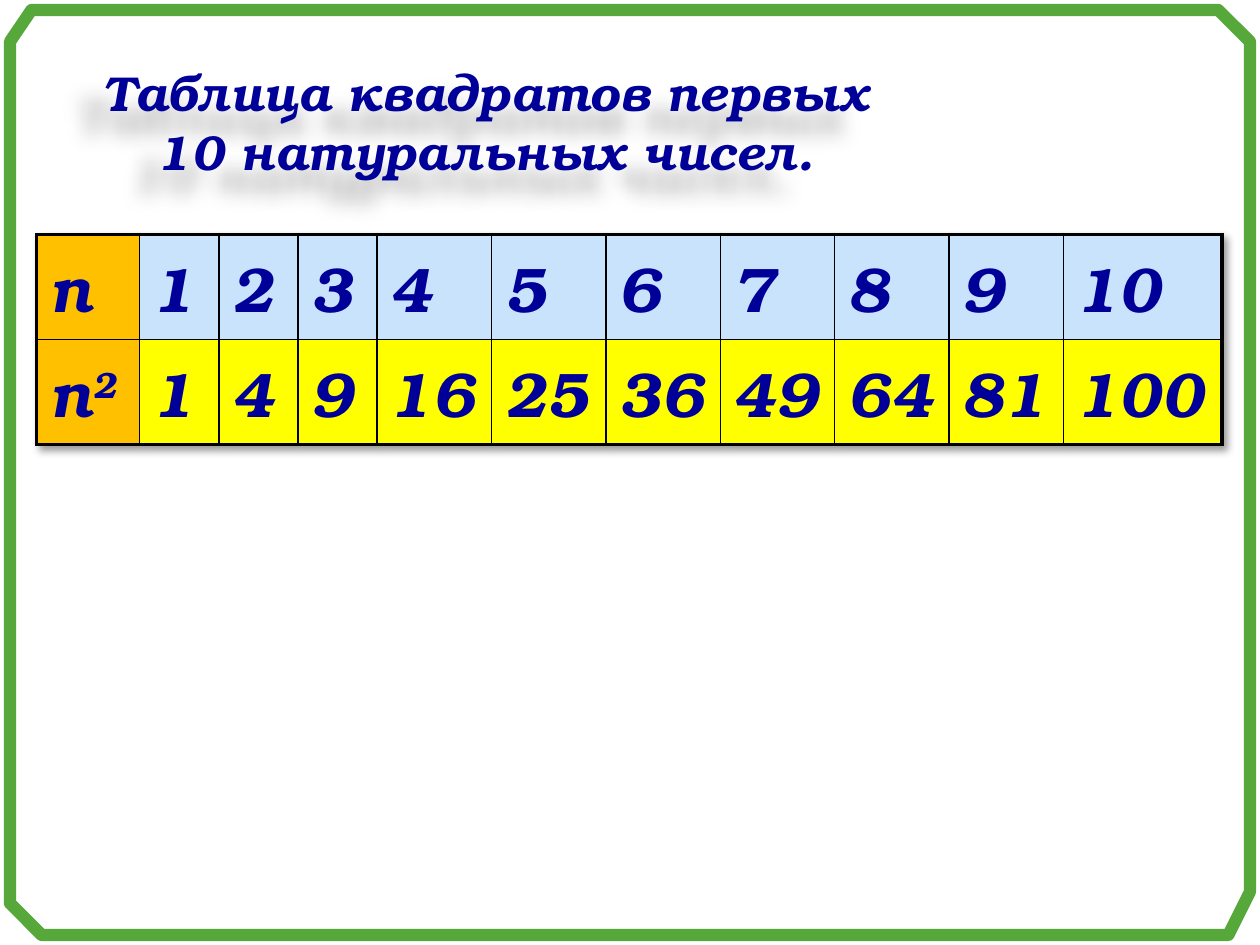
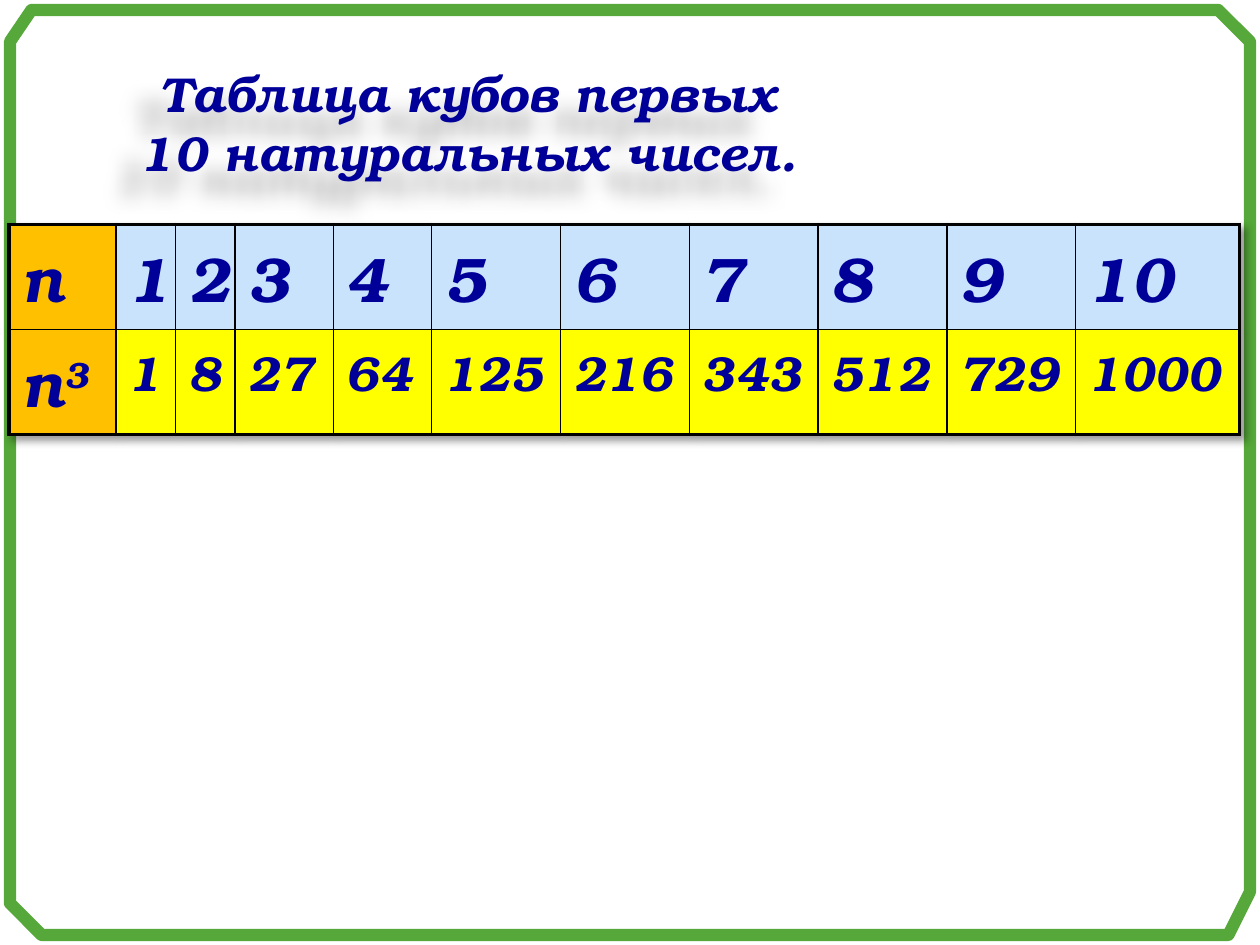
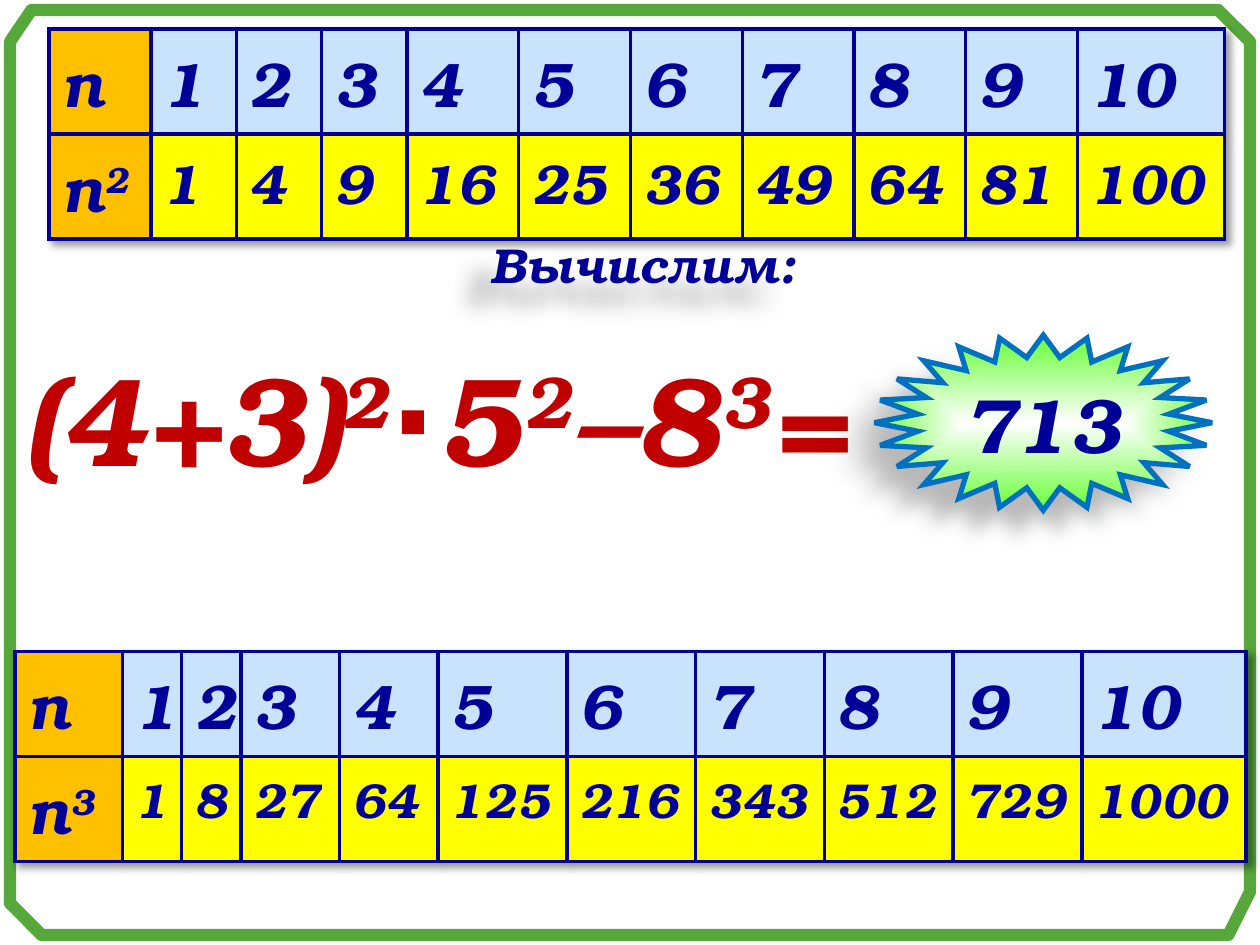
from pptx import Presentation
from pptx.dml.color import RGBColor
from pptx.enum.shapes import MSO_SHAPE as Preset
from pptx.enum.text import MSO_ANCHOR as Anchor, MSO_AUTO_SIZE as AutoSize, PP_ALIGN as Align
from pptx.oxml import parse_xml
from pptx.oxml.ns import nsdecls, qn
from pptx.util import Inches, Pt

COLORS = {
    "frame": "55A839",
    "ink": "000099",
    "formula": "C00000",
    "label": "FFC000",
    "number": "C8E3FB",
    "power": "FFFF00",
    "grid": "000000",
    "star_edge": "0070C0",
    "star_center": "FFFFFF",
    "star_rim": "66FF33",
}
FONT = "TeX Gyre Bonum"
FRAME_POINTS = [(0.08, 0.33), (0.08, 7.17), (0.33, 7.42), (9.75, 7.42),
                (9.92, 7.08), (9.92, 0.33), (9.67, 0.08), (0.25, 0.08)]
ROW_HEIGHT = 0.83
THICK, THIN = 2.25, 1
SOFT_SHADOW = {"alpha": 28, "blur": 11.8, "distance": 19.7, "angle": 141}
TABLE_SHADOW = {"alpha": 40, "blur": 4, "distance": 3, "angle": 45}
SQUARE_COLUMNS = [0.82] + [0.63] * 3 + [0.91] * 6 + [1.26]
SHORT_SQUARE_COLUMNS = [0.81] + [0.68] * 3 + [0.89] * 6 + [1.17]
CUBE_COLUMNS = [0.85] + [0.47] * 2 + [0.78] * 2 + [1.02] * 5 + [1.3]


def rgb(name):
    return RGBColor.from_string(COLORS[name])


def drawing(tag, attributes="", content=""):
    return parse_xml(f'<a:{tag} {nsdecls("a")} {attributes}>{content}</a:{tag}>')


def outer_shadow(alpha, blur, distance, angle):
    return drawing(
        "outerShdw",
        f'blurRad="{Pt(blur)}" dist="{Pt(distance)}" dir="{angle * 60000}" algn="ctr" rotWithShape="0"',
        f'<a:srgbClr val="000000"><a:alpha val="{alpha * 1000}"/></a:srgbClr>')


def write_text(frame, *parts, size=28, color="ink", align=Align.LEFT, anchor=Anchor.TOP, wrap=True):
    frame.word_wrap = wrap
    frame.vertical_anchor = anchor
    paragraph = frame.paragraphs[0]
    paragraph.alignment = align
    for position, part in enumerate(parts):
        run = paragraph.add_run()
        run.text = part
        run.font.name = FONT
        run.font.size = Pt(size)
        run.font.bold = run.font.italic = True
        run.font.color.rgb = rgb(color)
        is_superscript = position % 2 == 1
        if is_superscript:
            run._r.get_or_add_rPr().set("baseline", "30000")


class Deck:
    def __init__(self):
        self.presentation = Presentation()
        self.presentation.slide_width = Inches(10)
        self.presentation.slide_height = Inches(7.5)
        self.slide = None

    def add_slide(self):
        self.slide = self.presentation.slides.add_slide(self.presentation.slide_layouts[6])
        corners = [(Inches(x), Inches(y)) for x, y in FRAME_POINTS]
        builder = self.slide.shapes.build_freeform(*corners[0])
        builder.add_line_segments(corners[1:], close=True)
        frame = builder.convert_to_shape()
        frame.fill.background()
        self.outline(frame, "frame", 7, "round")
        frame.shadow.inherit = False

    def outline(self, shape, color, width, join):
        shape.line.color.rgb = rgb(color)
        shape.line.width = Pt(width)
        limit = 'lim="800000"' if join == "miter" else ""
        shape.line._get_or_add_ln().append(drawing(join, limit))

    def preset(self, kind, box, adjustments):
        shape = self.slide.shapes.add_shape(kind, *map(Inches, box))
        for index, value in enumerate(adjustments):
            shape.adjustments[index] = value
        shape.shadow.inherit = False
        shape._element.spPr.find(qn("a:effectLst")).append(outer_shadow(**SOFT_SHADOW))
        return shape

    def title(self, text, box, pointer):
        callout = self.preset(Preset.ROUNDED_RECTANGULAR_CALLOUT, box, (*pointer, 0.167))
        callout.fill.background()
        callout.line.fill.background()
        write_text(callout.text_frame, text, align=Align.CENTER)

    def formula(self, parts, box):
        frame = self.slide.shapes.add_textbox(*map(Inches, box)).text_frame
        write_text(frame, *parts, size=72, color="formula", wrap=False)
        frame.auto_size = AutoSize.SHAPE_TO_FIT_TEXT

    def answer_star(self, text, box):
        star = self.preset(Preset.STAR_24_POINT, box, (0.375,))
        star.fill.gradient()
        for stop, color in zip(star.fill.gradient_stops, ("star_center", "star_rim")):
            stop.color.rgb = rgb(color)
        gradient = star._element.spPr.find(qn("a:gradFill"))
        gradient.remove(gradient.find(qn("a:lin")))
        gradient.append(drawing("path", 'path="shape"',
                                '<a:fillToRect l="50000" t="50000" r="50000" b="50000"/>'))
        self.outline(star, "star_edge", 3, "miter")
        write_text(star.text_frame, text, size=44, align=Align.CENTER,
                   anchor=Anchor.MIDDLE, wrap=False)

    def power_table(self, exponent, left, top, width, columns,
                    power_size=36, grid="grid", inner=THIN):
        numbers = range(1, 11)
        rows = [[("n",)] + [(str(n),) for n in numbers],
                [("n", str(exponent))] + [(str(n ** exponent),) for n in numbers]]
        graphic = self.slide.shapes.add_table(
            len(rows), len(columns), Inches(left), Inches(top),
            Inches(width), Inches(ROW_HEIGHT * len(rows)))
        table = graphic.table
        table.first_row = table.horz_banding = False
        effects = drawing("effectLst")
        effects.append(outer_shadow(**TABLE_SHADOW))
        table._tbl.tblPr.insert(0, effects)
        for column, share in zip(table.columns, columns):
            column.width = Inches(width * share / sum(columns))
        last_row, last_column = len(rows) - 1, len(columns) - 1
        for r, row in enumerate(rows):
            table.rows[r].height = Inches(ROW_HEIGHT)
            for c, parts in enumerate(row):
                cell = table.cell(r, c)
                write_text(cell.text_frame, *parts, size=power_size if r and c else 36)
                edges = {"lnL": c == 0, "lnR": c == last_column,
                         "lnT": r == 0, "lnB": r == last_row}
                self.cell_borders(cell, edges, grid, inner)
                cell.fill.solid()
                cell.fill.fore_color.rgb = rgb("label" if c == 0 else ("number", "power")[r])

    def cell_borders(self, cell, edges, color, inner):
        properties = cell._tc.get_or_add_tcPr()
        for side, is_outer in edges.items():
            properties.append(drawing(
                side, f'w="{Pt(THICK if is_outer else inner)}"',
                f'<a:solidFill><a:srgbClr val="{COLORS[color]}"/></a:solidFill>'))


def main():
    deck = Deck()

    deck.add_slide()
    deck.title("Таблица квадратов первых 10 натуральных чисел.",
               (0.51, 0.39, 6.69, 1.17), (0.627, 0.186))
    deck.power_table(2, 0.29, 1.86, 9.41, SQUARE_COLUMNS)

    deck.add_slide()
    deck.title("Таблица кубов первых 10 натуральных чисел.",
               (0.86, 0.39, 5.72, 1.39), (0.742, 0.473))
    deck.power_table(3, 0.07, 1.78, 9.77, CUBE_COLUMNS, power_size=28)

    deck.add_slide()
    deck.title("Вычислим:", (3.03, 1.78, 4.14, 0.7), (0.473, 1.319))
    deck.power_table(3, 0.12, 5.17, 9.77, CUBE_COLUMNS,
                     power_size=28, grid="ink", inner=THICK)
    deck.power_table(2, 0.39, 0.23, 9.33, SHORT_SQUARE_COLUMNS,
                     power_size=32, grid="ink", inner=THICK)
    deck.formula(("(4+3)", "2", "⋅5", "2", "–8", "3", "="), (0.12, 2.65, 6.82, 1.31))
    deck.answer_star("713", (6.94, 2.66, 2.68, 1.39))

    deck.presentation.save("out.pptx")


if __name__ == "__main__":
    main()
